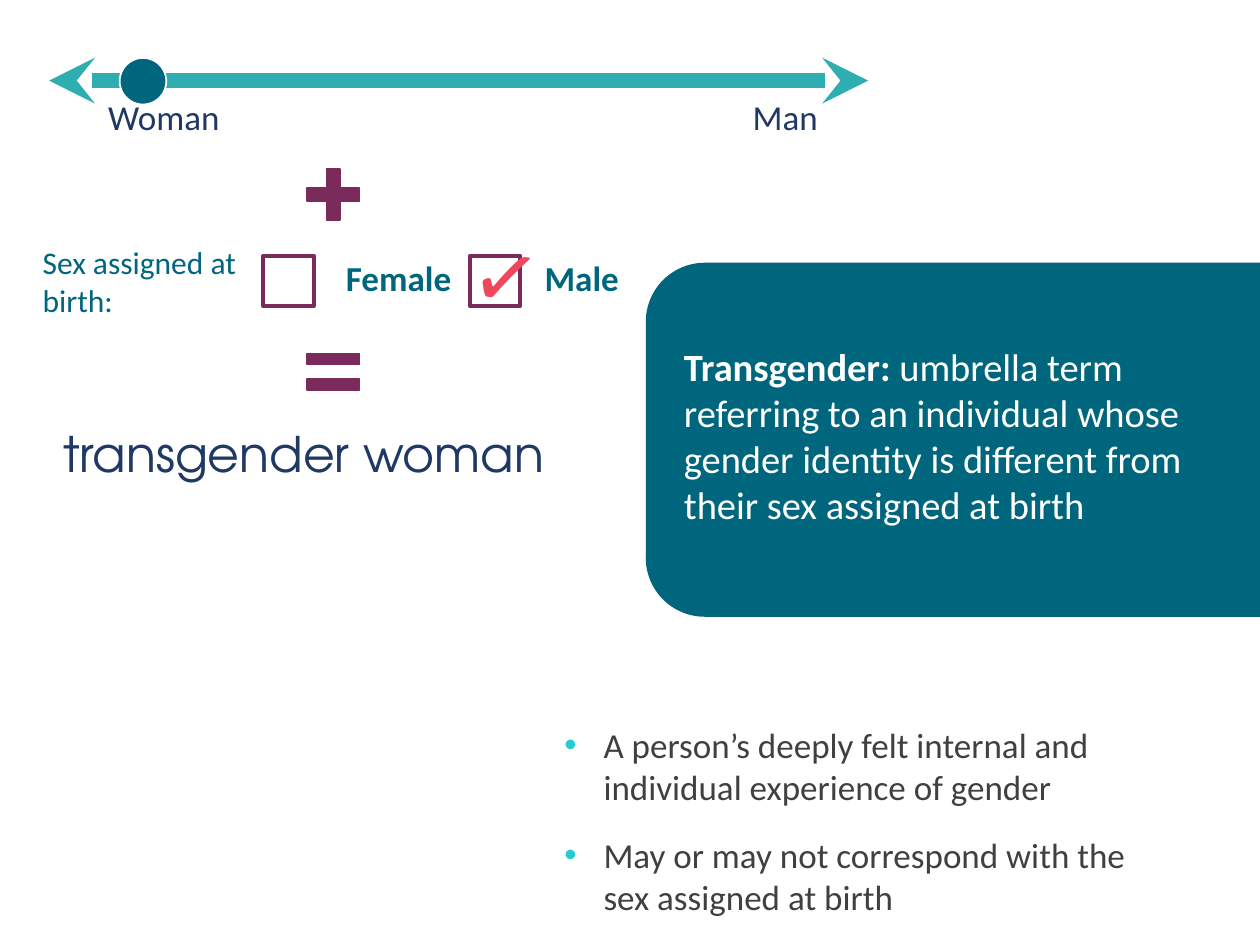
from dataclasses import dataclass
from typing import Any, NamedTuple, Optional

import pptx
import pptx.dml.color
import pptx.enum.dml
import pptx.enum.shapes
import pptx.enum.text
import pptx.oxml.ns
import pptx.util
from lxml import etree
from pptx.util import Inches

SHAPE = pptx.enum.shapes.MSO_SHAPE
ALIGN = pptx.enum.text.PP_ALIGN
ANCHOR = pptx.enum.text.MSO_ANCHOR
AUTO = pptx.enum.text.MSO_AUTO_SIZE


@dataclass(frozen=True)
class Theme:
    teal: str = "00667D"
    aqua: str = "2FAEB1"
    bullet: str = "26CAD3"
    navy: str = "203864"
    plum: str = "7A2A5B"
    coral: str = "F1475D"
    grey: str = "404040"
    white: str = "FFFFFF"
    body_font: str = "Calibri"
    display_font: str = "TeX Gyre Adventor"
    prompt_size: int = 18
    text_size: int = 20
    definition_size: int = 22
    result_size: int = 28
    tick_size: int = 48


class Box(NamedTuple):
    left: float
    top: float
    width: float
    height: float

    def lengths(self) -> list:
        return [Inches(value) for value in self]


class Label(NamedTuple):
    text: str
    box: Box
    color: str
    size: int
    align: Any = ALIGN.LEFT
    bold: bool = False
    wrap: bool = False
    rotation: float = 0


class Figure(NamedTuple):
    preset: Any
    box: Box
    fill: Optional[str] = None
    line: Optional[str] = None
    weight: float = 1
    adjustments: tuple = ()
    rotation: float = 0


THEME = Theme()


def rgb(value: str) -> Any:
    return pptx.dml.color.RGBColor.from_string(value)


def add_child(parent: Any, tag: str, **attributes: str) -> Any:
    return etree.SubElement(parent, pptx.oxml.ns.qn(tag), **attributes)


def set_font(paragraph: Any, color: str, size: int, bold: bool = False,
             name: str = THEME.body_font) -> None:
    font = paragraph.font
    font.name = name
    font.size = pptx.util.Pt(size)
    font.bold = bold
    font.color.rgb = rgb(color)


def place(target: Any, box: Box) -> None:
    target.left, target.top, target.width, target.height = box.lengths()


def draw_label(shapes: Any, label: Label) -> None:
    holder = shapes.add_textbox(*label.box.lengths())
    holder.rotation = label.rotation
    holder.text_frame.word_wrap = label.wrap
    paragraph = holder.text_frame.paragraphs[0]
    paragraph.text = label.text
    paragraph.alignment = label.align
    set_font(paragraph, label.color, label.size, label.bold)


def draw_figure(shapes: Any, figure: Figure) -> Any:
    drawn = shapes.add_shape(figure.preset, *figure.box.lengths())
    drawn.shadow.inherit = False
    drawn.rotation = figure.rotation
    for index, value in enumerate(figure.adjustments):
        drawn.adjustments[index] = value
    if figure.fill:
        drawn.fill.solid()
        drawn.fill.fore_color.rgb = rgb(figure.fill)
    else:
        drawn.fill.background()
    if figure.line:
        drawn.line.color.rgb = rgb(figure.line)
        drawn.line.width = pptx.util.Pt(figure.weight)
    else:
        drawn.line.fill.background()
    return drawn


def draw_spectrum(shapes: Any) -> None:
    axis = shapes.add_connector(
        pptx.enum.shapes.MSO_CONNECTOR.STRAIGHT,
        Inches(0.39), Inches(0.64), Inches(6.89), Inches(0.64))
    axis.line.color.rgb = rgb(THEME.aqua)
    axis.line.width = pptx.util.Pt(8.75)
    for end in ("a:headEnd", "a:tailEnd"):
        add_child(axis.line._get_or_add_ln(), end, type="stealth")
    add_child(axis._element.spPr, "a:effectLst")
    draw_label(shapes, Label("Woman", Box(0.76, 0.71, 1.26, 0.44),
                             THEME.navy, THEME.text_size))
    draw_label(shapes, Label("Man", Box(5.22, 0.71, 1.37, 0.44),
                             THEME.navy, THEME.text_size, ALIGN.RIGHT))
    draw_figure(shapes, Figure(SHAPE.OVAL, Box(0.95, 0.46, 0.37, 0.37),
                               THEME.teal, THEME.white))


def draw_definition(shapes: Any) -> None:
    draw_figure(shapes, Figure(SHAPE.ROUND_2_SAME_RECTANGLE,
                               Box(6.16, 1.05, 2.81, 4.88), THEME.teal,
                               rotation=270))
    panel = draw_figure(shapes, Figure(SHAPE.RECTANGLE,
                                       Box(5.33, 2.67, 4.46, 1.58), THEME.teal))
    panel.text_frame.word_wrap = True
    panel.text_frame.vertical_anchor = ANCHOR.TOP
    paragraph = panel.text_frame.paragraphs[0]
    paragraph.alignment = ALIGN.LEFT
    paragraph.space_after = pptx.util.Pt(15)
    set_font(paragraph, THEME.white, THEME.definition_size)
    term = paragraph.add_run()
    term.text = "Transgender: "
    meaning = paragraph.add_run()
    meaning.text = ("umbrella term referring to an individual whose gender "
                    "identity is different from their sex assigned at birth")
    for run in (term, meaning):
        run.font.color.rgb = rgb(THEME.white)
    term.font.bold = True


def draw_birth_sex(shapes: Any) -> None:
    for left in (2.09, 3.73):
        draw_figure(shapes, Figure(SHAPE.RECTANGLE, Box(left, 2.03, 0.4, 0.4),
                                   line=THEME.plum, weight=2.25))
    for label in (
        Label("Sex assigned at birth:", Box(0.24, 1.88, 1.76, 0.79),
              THEME.teal, THEME.prompt_size, wrap=True),
        Label("Female", Box(2.6, 1.99, 1.08, 0.44), THEME.teal,
              THEME.text_size, ALIGN.RIGHT, True),
        Label("Male", Box(4.17, 1.99, 0.84, 0.44), THEME.teal,
              THEME.text_size, ALIGN.RIGHT, True),
        Label("✓", Box(3.65, 1.72, 0.65, 0.91), THEME.coral,
              THEME.tick_size, wrap=True, rotation=8.3),
    ):
        draw_label(shapes, label)


def fill_result(title: Any) -> None:
    place(title, Box(0.4, 3.31, 4.08, 0.57))
    title.text_frame.text = "transgender woman"
    title.text_frame.word_wrap = False
    title.text_frame.auto_size = AUTO.NONE
    title.text_frame.vertical_anchor = ANCHOR.TOP
    paragraph = title.text_frame.paragraphs[0]
    paragraph.alignment = ALIGN.LEFT
    set_font(paragraph, THEME.navy, THEME.result_size, name=THEME.display_font)


def fill_notes_on_identity(body: Any) -> None:
    place(body, Box(4.38, 5.69, 5.03, 1.66))
    body.text_frame.text = "\n".join((
        "A person’s deeply felt internal and individual experience of gender",
        "May or may not correspond with the sex assigned at birth"))
    body.text_frame.auto_size = AUTO.NONE
    for paragraph in body.text_frame.paragraphs:
        paragraph.space_before = pptx.util.Pt(0)
        paragraph.space_after = pptx.util.Pt(15)
        properties = paragraph._p.get_or_add_pPr()
        properties.set("marL", str(Inches(0.31)))
        properties.set("indent", str(-Inches(0.31)))
        add_child(add_child(properties, "a:buClr"), "a:srgbClr", val=THEME.bullet)
        add_child(properties, "a:buFont", typeface="Arial")
        add_child(properties, "a:buChar", char="•")
        set_font(paragraph, THEME.grey, THEME.text_size)


def main() -> None:
    deck = pptx.Presentation()
    deck.slide_width, deck.slide_height = Inches(10), Inches(7.5)
    slide = deck.slides.add_slide(deck.slide_layouts[1])
    fill_result(slide.shapes.title)
    fill_notes_on_identity(slide.placeholders[1])
    draw_spectrum(slide.shapes)
    draw_definition(slide.shapes.add_group_shape().shapes)
    draw_figure(slide.shapes, Figure(SHAPE.MATH_EQUAL, Box(2.36, 2.68, 0.57, 0.54),
                                     THEME.plum, THEME.plum,
                                     adjustments=(0.16, 0.21)))
    draw_figure(slide.shapes, Figure(SHAPE.MATH_PLUS, Box(2.36, 1.27, 0.57, 0.55),
                                     THEME.plum, THEME.plum, adjustments=(0.19,)))
    draw_birth_sex(slide.shapes.add_group_shape().shapes)
    deck.save("out.pptx")


if __name__ == "__main__":
    main()
